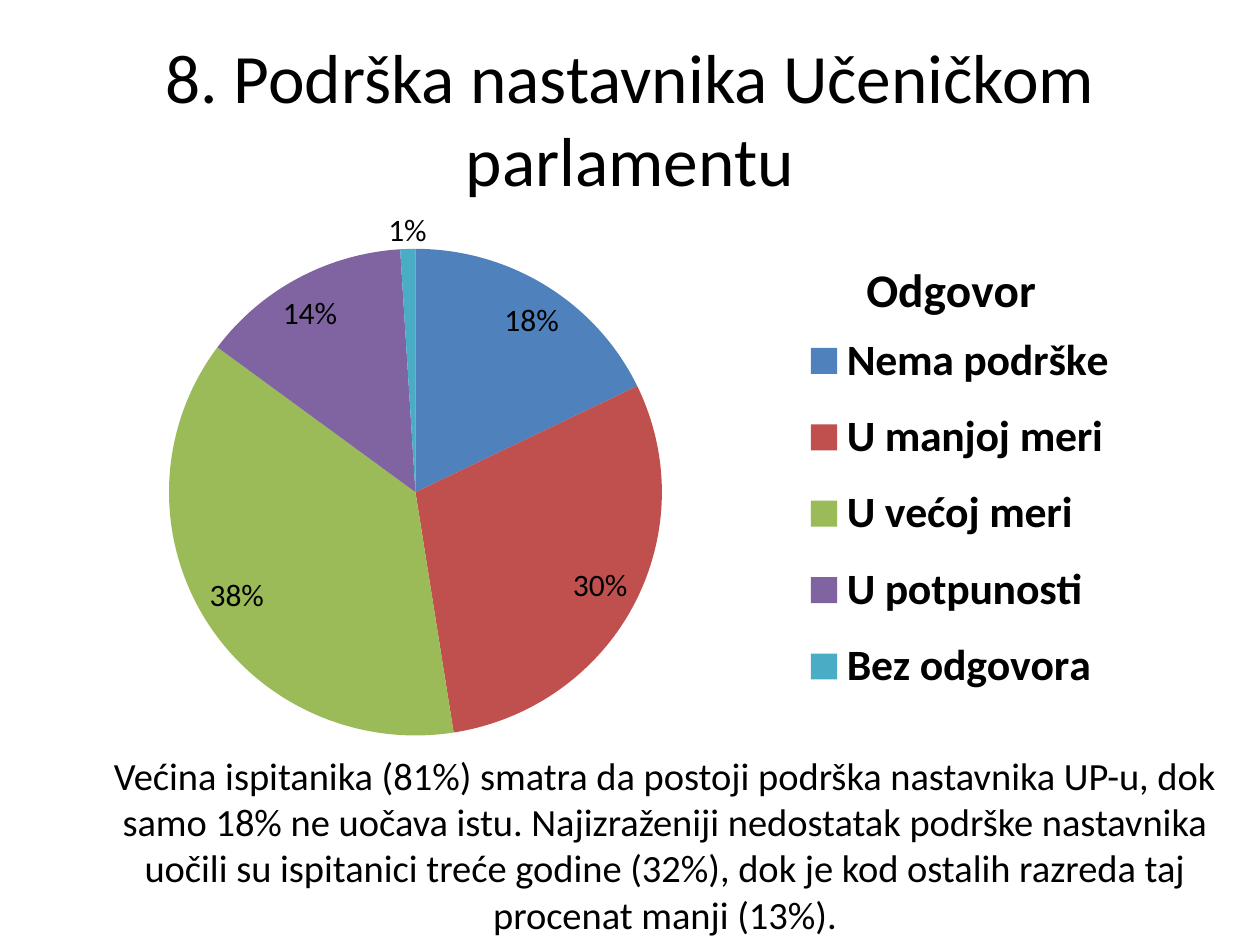
from lxml import etree
from pptx import Presentation
from pptx import util as u
from pptx.chart.data import CategoryChartData
from pptx.dml.color import RGBColor
from pptx.enum import chart as charts, text
from pptx.oxml.ns import qn

PX = u.Inches(1) // 126
FONT = "Calibri"
BLACK = RGBColor(0x00, 0x00, 0x00)
BLUE = RGBColor(0x4F, 0x81, 0xBD)
RED = RGBColor(0xC0, 0x50, 0x4D)
GREEN = RGBColor(0x9B, 0xBB, 0x59)
PURPLE = RGBColor(0x80, 0x64, 0xA2)
TEAL = RGBColor(0x4B, 0xAC, 0xC6)


def style_font(font, size, bold=False):
    font.name = FONT
    font.size = u.Pt(size)
    font.bold = bold
    font.color.rgb = BLACK


def place_chart_part(part, **settings):
    for old_layout in part.findall(qn("c:layout")):
        part.remove(old_layout)
    layout = etree.Element(qn("c:layout"))
    manual = etree.SubElement(layout, qn("c:manualLayout"))
    for name, value in settings.items():
        etree.SubElement(manual, qn(f"c:{name}")).set("val", str(value))
    overlay = part.find(qn("c:overlay"))
    part.insert(0 if overlay is None else part.index(overlay), layout)


presentation = Presentation()
presentation.slide_width = 1260 * PX
presentation.slide_height = 945 * PX
slide = presentation.slides.add_slide(presentation.slide_layouts[6])

chart_data = CategoryChartData()
chart_data.categories = ["Nema podrške", "U manjoj meri", "U većoj meri",
                         "U potpunosti", "Bez odgovora"]
chart_data.add_series("Odgovor", (18, 30, 38, 14, 1))
chart = slide.shapes.add_chart(charts.XL_CHART_TYPE.PIE, 64 * PX, 204 * PX,
                               1134 * PX, 624 * PX, chart_data).chart
style_font(chart.font, 18)

chart.has_title = True
title_run = chart.chart_title.text_frame.paragraphs[0].add_run()
title_run.text = "Odgovor"
style_font(title_run.font, 27, bold=True)

chart.has_legend = True
chart.legend.position = charts.XL_LEGEND_POSITION.RIGHT
chart.legend.include_in_layout = False
style_font(chart.legend.font, 25, bold=True)

edges = {"xMode": "edge", "yMode": "edge"}
chart_root = chart.element.find(qn("c:chart"))
place_chart_part(chart_root.find(qn("c:title")), **edges, x=0.7, y=0.06)
place_chart_part(chart_root.find(qn("c:plotArea")), layoutTarget="inner",
                 **edges, x=0.09, y=0.06, w=0.44, h=0.79)
place_chart_part(chart_root.find(qn("c:legend")), **edges,
                 x=0.64, y=0.16, w=0.3, h=0.66)

plot = chart.plots[0]
plot.vary_by_categories = True
for index, color in enumerate((BLUE, RED, GREEN, PURPLE, TEAL)):
    fill = plot.series[0].points[index].format.fill
    fill.solid()
    fill.fore_color.rgb = color

plot.has_data_labels = True
labels = plot.data_labels
labels.show_value = False
labels.show_percentage = True
labels.number_format = "0%"
labels.number_format_is_linked = False
labels.position = charts.XL_LABEL_POSITION.BEST_FIT
style_font(labels.font, 18)

TEXTS = (
    ((63, 38, 1134, 158), 39.6, text.MSO_ANCHOR.MIDDLE,
     "8. Podrška nastavnika Učeničkom parlamentu"),
    ((94, 746, 1142, 199), 22, text.MSO_ANCHOR.TOP,
     "Većina ispitanika (81%) smatra da postoji podrška nastavnika UP-u, dok "
     "samo 18% ne uočava istu. Najizraženiji nedostatak podrške nastavnika "
     "uočili su ispitanici treće godine (32%), dok je kod ostalih razreda taj "
     "procenat manji (13%)."),
)
for box, size, anchor, wording in TEXTS:
    frame = slide.shapes.add_textbox(*(value * PX for value in box)).text_frame
    frame.word_wrap = True
    frame.vertical_anchor = anchor
    paragraph = frame.paragraphs[0]
    paragraph.alignment = text.PP_ALIGN.CENTER
    run = paragraph.add_run()
    run.text = wording
    style_font(run.font, size)

presentation.save("out.pptx")
